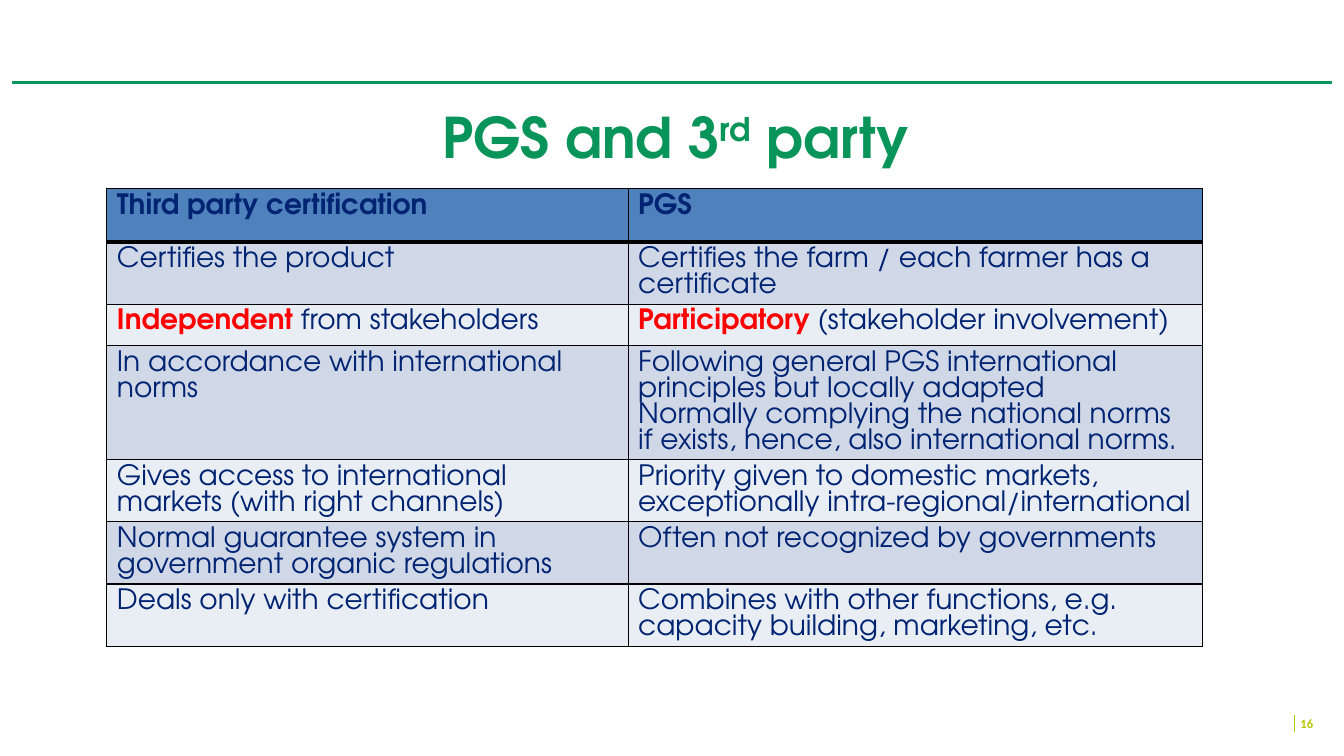
import pptx
import pptx.util
import pptx.dml.color
import pptx.enum.shapes
import pptx.enum.text
from lxml import etree
from pptx.util import Inches, Pt

RGBColor = pptx.dml.color.RGBColor
GREEN = RGBColor(0x09, 0x94, 0x59)
LIME = RGBColor(0xB4, 0xC8, 0x00)
NAVY = RGBColor(0x00, 0x23, 0x72)
RED = RGBColor(0xFF, 0x00, 0x00)
HEADER_FILL = RGBColor(0x4F, 0x81, 0xBD)
BAND_FILLS = [RGBColor(0xE9, 0xED, 0xF4), RGBColor(0xD0, 0xD8, 0xE8)]
FONT = "TeX Gyre Adventor"

# A cell is a list of paragraphs; a paragraph is a list of (text, is_key_word).
COMPARISON = [
    ([[("Third party certification", False)]], [[("PGS", False)]]),
    ([[("Certifies the product", False)]],
     [[("Certifies the farm / each farmer has a certificate", False)]]),
    ([[("Independent", True), (" from stakeholders", False)]],
     [[("Participatory", True), (" (stakeholder involvement)", False)]]),
    ([[("In accordance with international norms", False)]],
     [[("Following general PGS international principles but locally adapted", False)],
      [("Normally complying the national norms if exists, hence, "
        "also international norms.", False)]]),
    ([[("Gives access to international markets (with right channels)", False)]],
     [[("Priority given to domestic markets, "
        "exceptionally intra-regional/international", False)]]),
    ([[("Normal guarantee system in government organic regulations", False)]],
     [[("Often not recognized by governments", False)]]),
    ([[("Deals only with certification", False)]],
     [[("Combines with other functions, e.g. capacity building, marketing, etc.", False)]]),
]


class SlideBuilder:
    def __init__(self, slide):
        self.slide = slide

    def run(self, paragraph, text, size, color, bold=True, font=FONT):
        run = paragraph.add_run()
        run.text = text
        run.font.name = font
        run.font.size = Pt(size)
        run.font.bold = bold
        run.font.color.rgb = color
        return run

    def line(self, x1, y1, x2, y2, color, width):
        rule = self.slide.shapes.add_connector(
            pptx.enum.shapes.MSO_CONNECTOR.STRAIGHT,
            Inches(x1), Inches(y1), Inches(x2), Inches(y2))
        rule.line.color.rgb = color
        rule.line.width = Pt(width)
        etree.SubElement(rule._element.spPr, pptx.oxml.ns.qn("a:effectLst"))

    def text_box(self, left, top, width, height):
        """Add a wrapping text box and return its text frame."""
        frame = self.slide.shapes.add_textbox(
            Inches(left), Inches(top), Inches(width), Inches(height)).text_frame
        frame.word_wrap = True
        return frame

    def borders(self, cell, bottom_width):
        """Draw black cell edges; they must precede the fill in the XML."""
        properties = cell._tc.get_or_add_tcPr()
        widths = {"lnL": 1, "lnR": 1, "lnT": 1, "lnB": bottom_width}
        for position, (side, width) in enumerate(widths.items()):
            edge = etree.Element(pptx.oxml.ns.qn(f"a:{side}"), w=str(Pt(width)))
            fill = etree.SubElement(edge, pptx.oxml.ns.qn("a:solidFill"))
            etree.SubElement(fill, pptx.oxml.ns.qn("a:srgbClr"), val="000000")
            properties.insert(position, edge)

    def cell(self, cell, paragraphs, fill, is_header):
        cell.fill.solid()
        cell.fill.fore_color.rgb = fill
        self.borders(cell, 3 if is_header else 1)
        for index, runs in enumerate(paragraphs):
            frame = cell.text_frame
            paragraph = frame.add_paragraph() if index else frame.paragraphs[0]
            paragraph.line_spacing = Pt(18.6)
            for text, is_key in runs:
                self.run(paragraph, text, 20, RED if is_key else NAVY, is_key or is_header)

    def table(self, left, top, column_widths, header_height, row_height, rows):
        height = header_height + row_height * (len(rows) - 1)
        table = self.slide.shapes.add_table(
            len(rows), len(column_widths), Inches(left), Inches(top),
            Inches(sum(column_widths)), Inches(height)).table
        for column, width in zip(table.columns, column_widths):
            column.width = Inches(width)
        for r, row in enumerate(rows):
            table.rows[r].height = Inches(row_height if r else header_height)
            for c, paragraphs in enumerate(row):
                fill = BAND_FILLS[r % 2] if r else HEADER_FILL
                self.cell(table.cell(r, c), paragraphs, fill, r == 0)


def main():
    presentation = pptx.Presentation()
    presentation.slide_width = Inches(13.33)
    presentation.slide_height = Inches(7.5)
    builder = SlideBuilder(presentation.slides.add_slide(presentation.slide_layouts[6]))

    page_number = builder.text_box(12.8, 7.05, 0.72, 0.4)
    builder.run(page_number.paragraphs[0], "16", 9, LIME, font="Calibri")
    builder.line(12.84, 7.09, 12.84, 7.26, LIME, 1)
    builder.line(0.12, 0.82, 13.21, 0.82, GREEN, 2.25)

    title_frame = builder.text_box(0.7, 0.96, 12, 0.91)
    title_frame.vertical_anchor = pptx.enum.text.MSO_ANCHOR.MIDDLE
    title = title_frame.paragraphs[0]
    title.alignment = pptx.enum.text.PP_ALIGN.CENTER
    title.line_spacing = 0.8
    builder.run(title, "PGS and 3", 40, GREEN)
    ordinal = builder.run(title, "rd", 40, GREEN)
    ordinal.font._element.set("baseline", "30000")
    builder.run(title, " party", 40, GREEN)

    builder.table(1.06, 1.87, [5.17, 5.7], 0.53, 0.41, COMPARISON)
    presentation.save("out.pptx")


if __name__ == "__main__":
    main()
